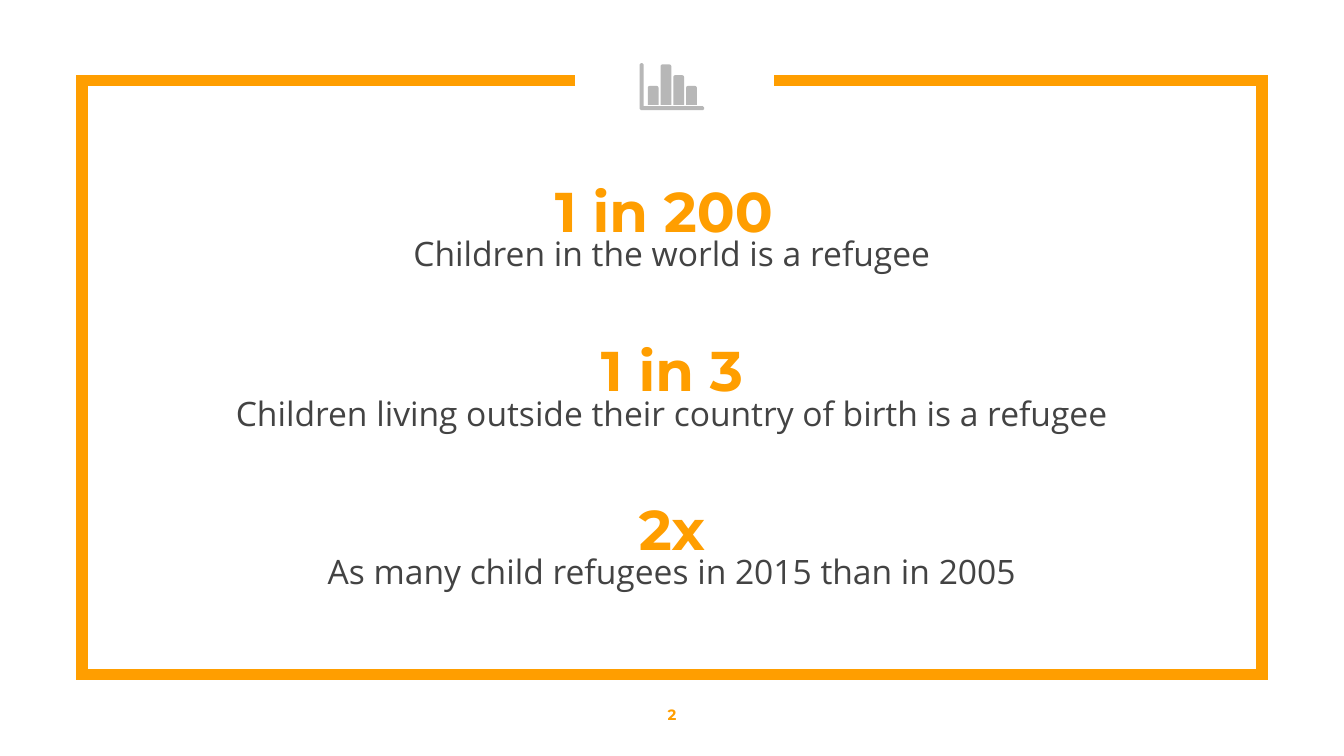
"""Build the slide of three child refugee statistics inside an open frame."""
import pptx
import pptx.dml.color
import pptx.enum.shapes
import pptx.enum.text
import pptx.oxml.ns
import pptx.util
from lxml import etree

Inches = pptx.util.Inches
ORANGE, DARK, GREY = "FF9E00", "434343", "B7B7B7"
STATISTICS = [
    ("1 in 200 ", "Children in the world is a refugee"),
    ("1 in 3", "Children living outside their country of birth is a refugee"),
    ("2x", "As many child refugees in 2015 than in 2005"),
]
FRAME = [(4.28, 0.6), (0.61, 0.6), (0.61, 5.02), (9.39, 5.02), (9.39, 0.6), (5.76, 0.6)]
AXES = [(4.77, 0.47), (4.76, 0.48), (4.76, 0.81), (4.77, 0.82), (5.23, 0.82),
        (5.24, 0.81), (5.24, 0.8), (5.23, 0.79), (4.79, 0.79), (4.79, 0.48), (4.78, 0.47)]
BAR_TOPS = [0.64, 0.48, 0.56, 0.64]


def color(hex_value):
    return pptx.dml.color.RGBColor.from_string(hex_value)


class SlideBuilder:
    def __init__(self, slide):
        self.slide = slide

    def text(self, content, top, height, font, size, hex_value, bold=False,
             left=0.75, width=8.5, space_before=0, anchor="TOP"):
        box = self.slide.shapes.add_textbox(
            Inches(left), Inches(top), Inches(width), Inches(height))
        frame = box.text_frame
        frame.word_wrap = True
        frame.vertical_anchor = pptx.enum.text.MSO_ANCHOR[anchor]
        frame.margin_left = frame.margin_right = Inches(0.1)
        frame.margin_top = frame.margin_bottom = Inches(0.1)
        paragraph = frame.paragraphs[0]
        paragraph.text = content
        paragraph.alignment = pptx.enum.text.PP_ALIGN.CENTER
        paragraph.space_before = pptx.util.Pt(space_before)
        paragraph.font.name = font
        paragraph.font.size = pptx.util.Pt(size)
        paragraph.font.bold = bold
        paragraph.font.color.rgb = color(hex_value)

    def outline(self, shapes, points, close):
        corners = [(Inches(x), Inches(y)) for x, y in points]
        builder = shapes.build_freeform(*corners[0])
        builder.add_line_segments(corners[1:], close=close)
        return builder.convert_to_shape()

    def open_frame(self, points, hex_value, weight):
        border = self.outline(self.slide.shapes, points, False)
        border.shadow.inherit = False
        border.fill.background()
        border.line.color.rgb = color(hex_value)
        border.line.width = pptx.util.Pt(weight)
        line = border.line._get_or_add_ln()
        etree.SubElement(line, pptx.oxml.ns.qn("a:miter"), lim="800000")

    def solid(self, shape, hex_value):
        shape.shadow.inherit = False
        shape.fill.solid()
        shape.fill.fore_color.rgb = color(hex_value)
        shape.line.fill.background()

    def chart_icon(self, axes, bar_tops, hex_value):
        icon = self.slide.shapes.add_group_shape()
        self.solid(self.outline(icon.shapes, axes, True), hex_value)
        for index, top in enumerate(bar_tops):
            bar = icon.shapes.add_shape(
                pptx.enum.shapes.MSO_SHAPE.ROUND_2_SAME_RECTANGLE,
                Inches(4.82 + 0.095 * index), Inches(top), Inches(0.08), Inches(0.78 - top))
            self.solid(bar, hex_value)


def main():
    presentation = pptx.Presentation()
    presentation.slide_width = Inches(10)
    presentation.slide_height = presentation.slide_width * 9 // 16
    builder = SlideBuilder(presentation.slides.add_slide(presentation.slide_layouts[6]))
    builder.open_frame(FRAME, ORANGE, 6)
    for top, (figure, explanation) in zip((1.21, 2.4, 3.58), STATISTICS):
        builder.text(figure, top, 0.98, "Montserrat", 30, ORANGE, bold=True)
        builder.text(explanation, top + 0.42, 0.51, "Open Sans", 18, DARK, space_before=6)
    builder.chart_icon(AXES, BAR_TOPS, GREY)
    builder.text("2", 5.02, 0.6, "Montserrat", 8, ORANGE, bold=True,
                 left=0, width=10, anchor="MIDDLE")
    presentation.save("out.pptx")


if __name__ == "__main__":
    main()
